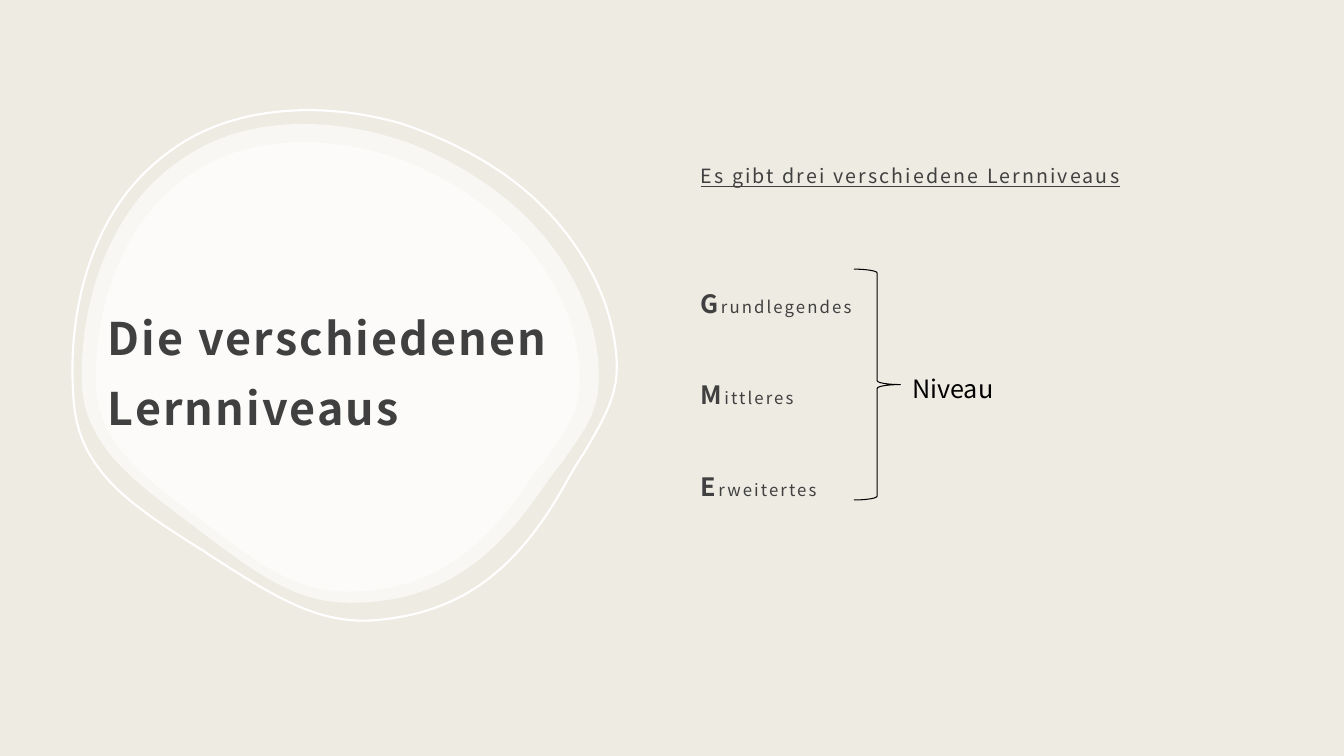
import pptx
import pptx.dml.color
import pptx.enum.shapes
import pptx.enum.text
import pptx.oxml
import pptx.oxml.ns
import pptx.util
from pptx.util import Inches

FONT = "Noto Sans CJK JP"
TEXT, WHITE, BLACK = "404040", "FFFFFF", "000000"
DRAWING_NS = pptx.oxml.ns.nsdecls("a")


def paint(color_format, hex_color):
    color_format.rgb = pptx.dml.color.RGBColor.from_string(hex_color)


def style(run, size, color, bold=False, underline=False, spacing=0):
    """Format a run; spacing is the letter spacing in points."""
    run.font.name = FONT
    run.font.size = pptx.util.Pt(size)
    run.font.bold = bold
    run.font.underline = underline
    paint(run.font.color, color)
    if spacing:
        run.font._element.set("spc", str(int(spacing * 100)))


presentation = pptx.Presentation()
presentation.slide_width = Inches(13.33)
presentation.slide_height = Inches(7.5)
slide = presentation.slides.add_slide(presentation.slide_layouts[1])
slide.background.fill.solid()
paint(slide.background.fill.fore_color, "EEEBE2")

# Pebble outline: a start point, then Bézier curves (two controls and an end)
pebble_left, pebble_top, pebble_width, pebble_height = 0.81, 1.23, 5.13, 4.75
outline = [
    (3.01, 1.23),
    (2.67, 1.23), (2.36, 1.29), (2.08, 1.42),
    (1.83, 1.54), (1.6, 1.71), (1.41, 1.93),
    (1.03, 2.38), (0.81, 3.03), (0.81, 3.74),
    (0.81, 4.03), (0.9, 4.26), (1.08, 4.49),
    (1.27, 4.73), (1.56, 4.95), (1.87, 5.18),
    (1.93, 5.22), (1.98, 5.27), (2.04, 5.31),
    (2.57, 5.71), (2.95, 5.98), (3.47, 5.98),
    (4.26, 5.98), (4.82, 5.65), (5.35, 4.89),
    (5.42, 4.79), (5.48, 4.7), (5.55, 4.62),
    (5.82, 4.25), (5.94, 4.07), (5.94, 3.74),
    (5.94, 3.42), (5.86, 3.11), (5.7, 2.8),
    (5.55, 2.51), (5.33, 2.23), (5.04, 1.99),
    (4.76, 1.76), (4.43, 1.57), (4.09, 1.43),
    (3.73, 1.3), (3.37, 1.23), (3.01, 1.23),
]

# The same pebble in three sizes, behind the text
pebbles = slide.shapes.add_group_shape()
for left, top, width, height, rotation, filled in [
    (0.81, 1.23, 5.13, 4.75, 0, True),
    (0.95, 1.41, 4.8, 4.46, 0, True),
    (0.71, 1.06, 5.4, 5.11, 355, False),
]:
    points = [(Inches(left + (x - pebble_left) * width / pebble_width),
               Inches(top + (y - pebble_top) * height / pebble_height))
              for x, y in outline]
    builder = pebbles.shapes.build_freeform(*points[0])
    builder.add_line_segments(points[1:], close=True)
    pebble = builder.convert_to_shape()
    segments = pebble._element.findall(".//" + pptx.oxml.ns.qn("a:lnTo"))
    for first in range(0, len(segments), 3):
        curve = pptx.oxml.parse_xml(f"<a:cubicBezTo {DRAWING_NS}/>")
        segments[first].addprevious(curve)
        for segment in segments[first:first + 3]:
            curve.append(segment[0])
            segment.getparent().remove(segment)
    pebble.shadow.inherit = False
    pebble.rotation = rotation
    if filled:
        pebble.fill.solid()
        paint(pebble.fill.fore_color, WHITE)
        pebble.line.fill.background()
        white = pebble._element.spPr.find(".//" + pptx.oxml.ns.qn("a:srgbClr"))
        white.append(pptx.oxml.parse_xml(f'<a:alpha {DRAWING_NS} val="60000"/>'))
    else:
        pebble.fill.background()
        paint(pebble.line.color, WHITE)
        pebble.line.width = pptx.util.Pt(1.5)
slide.shapes._spTree.insert(2, pebbles._element)

# Title and list
title, levels = slide.placeholders
for placeholder, left, top, width, height, margin_top, margin_bottom in [
    (title, 0.95, 2, 4.88, 3.21, 0.12, 0.1),
    (levels, 6.83, 1.21, 5.28, 4.74, 0.25, 0.88),
]:
    placeholder.left, placeholder.top = Inches(left), Inches(top)
    placeholder.width, placeholder.height = Inches(width), Inches(height)
    frame = placeholder.text_frame
    frame.word_wrap = True
    frame.auto_size = pptx.enum.text.MSO_AUTO_SIZE.NONE
    frame.vertical_anchor = pptx.enum.text.MSO_ANCHOR.MIDDLE
    frame.margin_left = frame.margin_right = Inches(0.12)
    frame.margin_top, frame.margin_bottom = Inches(margin_top), Inches(margin_bottom)

title.text_frame.text = "Die verschiedenen Lernniveaus"
heading = title.text_frame.paragraphs[0]
heading.alignment = pptx.enum.text.PP_ALIGN.LEFT
heading.line_spacing = 1.3
style(heading.runs[0], 32, TEXT, bold=True, spacing=1.5)

levels.text_frame.text = "Es gibt drei verschiedene Lernniveaus"
intro = levels.text_frame.paragraphs[0]
style(intro.runs[0], 14, TEXT, underline=True, spacing=1.5)
intro.space_before = pptx.util.Pt(0)
for initial, rest, space_before in [
    ("G", "rundlegendes", 65.3),
    ("M", "ittleres", 37.3),
    ("E", "rweitertes", 37.3),
]:
    level = levels.text_frame.add_paragraph()
    level.text = initial
    level.add_run().text = rest
    style(level.runs[0], 18, TEXT, bold=True, spacing=1.5)
    style(level.runs[1], 12, TEXT, spacing=1.5)
    level.space_before = pptx.util.Pt(space_before)
for paragraph in levels.text_frame.paragraphs:
    paragraph.line_spacing = 1.3
    properties = paragraph._p.get_or_add_pPr()
    properties.set("marL", "0")
    properties.set("indent", "0")
    properties.append(pptx.oxml.parse_xml(f"<a:buNone {DRAWING_NS}/>"))

# Brace joining the three levels
brace = slide.shapes.add_shape(pptx.enum.shapes.MSO_SHAPE.RIGHT_BRACE,
                               Inches(8.47), Inches(2.67), Inches(0.46), Inches(2.29))
brace.shadow.inherit = False
brace.fill.background()
paint(brace.line.color, BLACK)
brace.line.width = pptx.util.Pt(0.75)

niveau = slide.shapes.add_textbox(Inches(8.95), Inches(3.65), Inches(1.07), Inches(0.4))
niveau.text_frame.word_wrap = True
niveau.text_frame.text = "Niveau"
style(niveau.text_frame.paragraphs[0].runs[0], 18, BLACK)

presentation.save("out.pptx")
